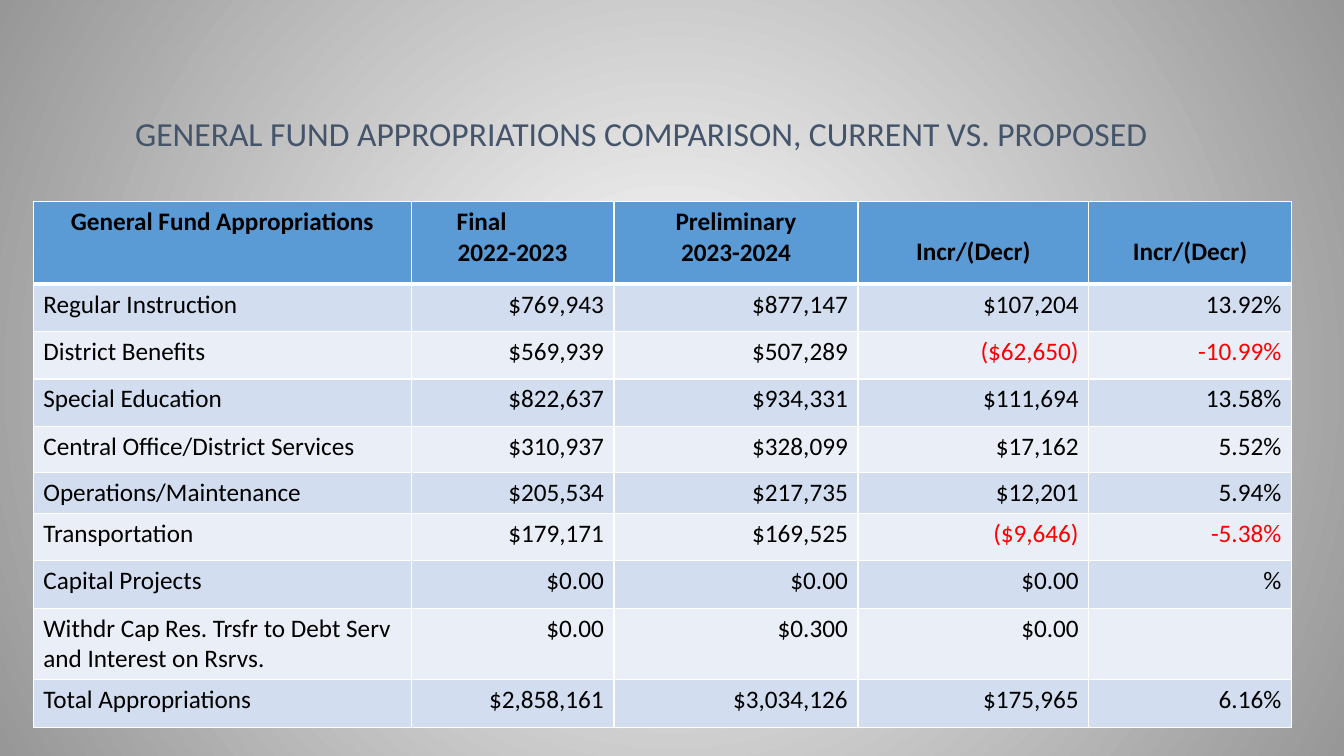
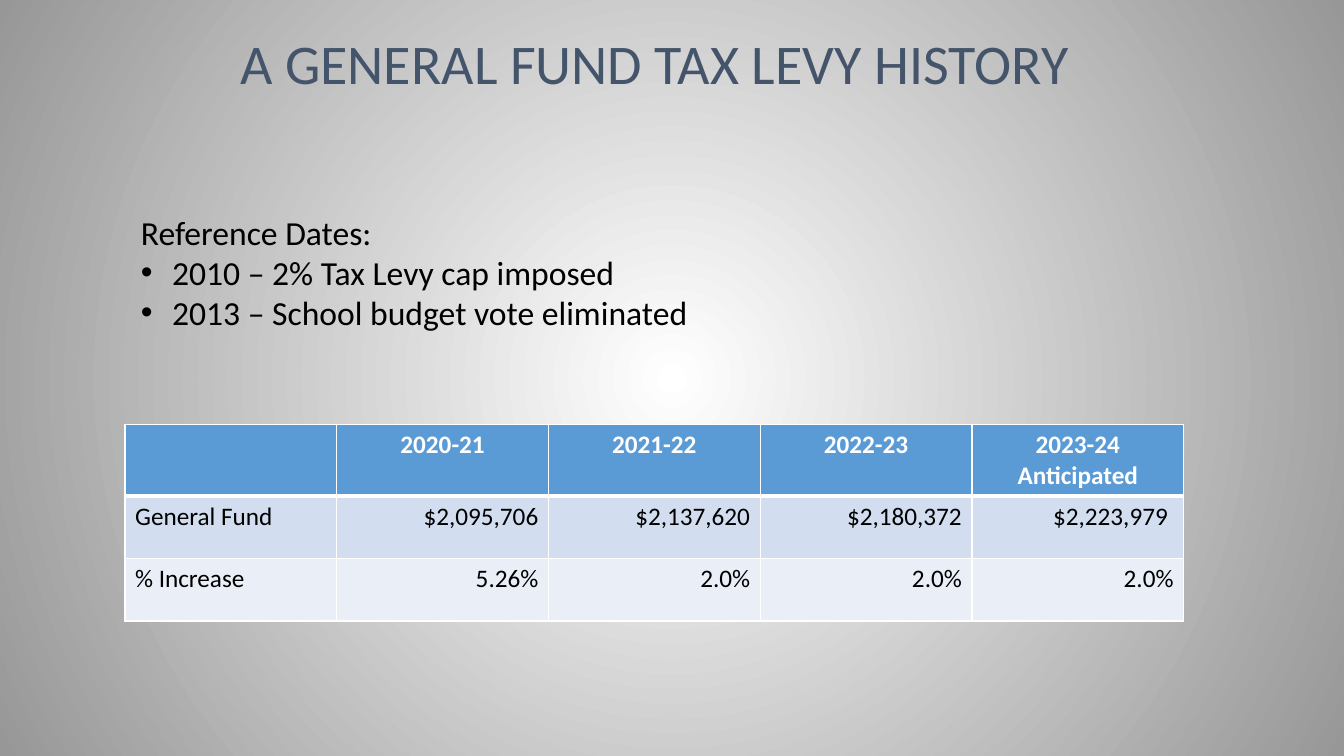
from lxml import etree
from pptx import Presentation
from pptx.dml.color import RGBColor
from pptx.enum.text import MSO_ANCHOR, MSO_AUTO_SIZE, PP_ALIGN
from pptx.oxml import parse_xml
from pptx.oxml.ns import nsdecls, qn
from pptx.util import Inches, Pt

LEFT, CENTER, RIGHT = PP_ALIGN.LEFT, PP_ALIGN.CENTER, PP_ALIGN.RIGHT
BOTTOM = MSO_ANCHOR.BOTTOM
NO_FIT = MSO_AUTO_SIZE.NONE

FONT = "Calibri"
HEX = {
    "title": "44546A",
    "head": "5B9BD5",
    "odd": "D2DEEF",
    "even": "EAEFF7",
    "text": "000000",
    "loss": "FF0000",
    "white": "FFFFFF",
    "edge": "979797",
}

FUNDS = [
    ["General Fund Appropriations", "Final\n2022-2023",
     "Preliminary\n2023-2024", "Incr/(Decr)", "Incr/(Decr)"],
    ["Regular Instruction", "$769,943", "$877,147", "$107,204", "13.92%"],
    ["District Benefits", "$569,939", "$507,289", "($62,650)", "-10.99%"],
    ["Special Education", "$822,637", "$934,331", "$111,694", "13.58%"],
    ["Central Office/District Services", "$310,937", "$328,099", "$17,162", "5.52%"],
    ["Operations/Maintenance", "$205,534", "$217,735", "$12,201", "5.94%"],
    ["Transportation", "$179,171", "$169,525", "($9,646)", "-5.38%"],
    ["Capital Projects", "$0.00", "$0.00", "$0.00", "%"],
    ["Withdr Cap Res. Trsfr to Debt Serv and Interest on Rsrvs.",
     "$0.00", "$0.300", "$0.00", ""],
    ["Total Appropriations", "$2,858,161", "$3,034,126", "$175,965", "6.16%"],
]
LEVY = [
    ["", "2020-21", "2021-22", "2022-23", "2023-24\nAnticipated"],
    ["General Fund", "$2,095,706", "$2,137,620", "$2,180,372", "$2,223,979 "],
    ["% Increase", "5.26%", "2.0%", "2.0%", "2.0%"],
]
DATES = [
    "Reference Dates:",
    "2010 – 2% Tax Levy cap imposed",
    "2013 – School budget vote eliminated",
]


def color(name):
    return RGBColor.from_string(HEX[name])


def style(para, size, ink, align=LEFT, bold=False):
    para.alignment = align
    for run in para.runs:
        font = run.font
        font.name, font.size, font.bold = FONT, Pt(size), bold
        font.color.rgb = color(ink)


def indent(para, left, first=0):
    props = para._p.get_or_add_pPr()
    props.set("marL", str(Inches(left)))
    props.set("indent", str(Inches(first)))
    return props


def paint(master):
    fill = master.background.fill
    fill.gradient()
    for stop, name in zip(fill.gradient_stops, ("white", "edge")):
        stop.color.rgb = color(name)
    grad = master.element.find(".//" + qn("p:bg") + "//" + qn("a:gradFill"))
    grad.replace(grad.find(qn("a:lin")), parse_xml(
        f'<a:path {nsdecls("a")} path="circle">'
        '<a:fillToRect l="50000" t="50000" r="50000" b="50000"/></a:path>'))


def add_slide(deck, text, top, high, size, align):
    slide = deck.slides.add_slide(deck.slide_layouts[5])
    title = slide.shapes.title
    title.left, title.top = Inches(1.24), Inches(top)
    title.width, title.height = Inches(10.5), Inches(high)
    frame = title.text_frame
    frame.text = text
    frame.auto_size, frame.word_wrap = NO_FIT, True
    frame.vertical_anchor = BOTTOM
    para = frame.paragraphs[0]
    para.line_spacing = 0.9
    style(para, size, "title", align)
    return slide


def border(cell, row):
    props = cell._tc.get_or_add_tcPr()
    thick = {0: "B", 1: "T"}.get(row)
    for side in "LRTB":
        width = Pt(3 if side == thick else 1)
        props.append(parse_xml(
            f'<a:ln{side} {nsdecls("a")} w="{width}"><a:solidFill>'
            f'<a:srgbClr val="{HEX["white"]}"/></a:solidFill></a:ln{side}>'))


def fill_cell(cell, text, row, col, ink):
    border(cell, row)
    cell.fill.solid()
    cell.fill.fore_color.rgb = color("head" if row == 0 else "odd" if row % 2 else "even")
    cell.text_frame.text = text
    if row == 0:
        align = CENTER
    else:
        align = RIGHT if col else LEFT
        ink = "loss" if text.startswith(("(", "-")) else "text"
    for para in cell.text_frame.paragraphs:
        style(para, 18, ink, align, row == 0)


def add_grid(slide, data, left, top, cols, rows, ink):
    table = slide.shapes.add_table(
        len(rows), len(cols), Inches(left), Inches(top),
        Inches(sum(cols)), Inches(sum(rows))).table
    for col, width in zip(table.columns, cols):
        col.width = Inches(width)
    for row, high in zip(table.rows, rows):
        row.height = Inches(high)
    for row, line in enumerate(data):
        for col, text in enumerate(line):
            fill_cell(table.cell(row, col), text, row, col, ink)
    return table


def add_notes(slide, lines):
    box = slide.shapes.add_textbox(Inches(1.3), Inches(2.05), Inches(10.24), Inches(2.02))
    frame = box.text_frame
    frame.word_wrap = True
    frame.text = "\n".join(lines)
    for num, para in enumerate(frame.paragraphs):
        style(para, 24, "text")
        if num:
            props = indent(para, 0.31, -0.31)
            etree.SubElement(props, qn("a:buFont")).set("typeface", "Arial")
            etree.SubElement(props, qn("a:buChar")).set("char", "•")


def add_funds(deck):
    slide = add_slide(deck, "GENERAL FUND APPROPRIATIONS COMPARISON, CURRENT VS. PROPOSED",
                      1.04, 0.54, 24, LEFT)
    table = add_grid(slide, FUNDS, 0.33, 2, [3.75, 2.01, 2.42, 2.29, 2.01],
                     [0.82, 0.47, 0.47, 0.47, 0.46, 0.4, 0.47, 0.47, 0.7, 0.47], "text")
    final = table.cell(0, 1).text_frame.paragraphs[0]
    final.alignment = LEFT
    indent(final, 0.35)
    for col in (3, 4):
        table.cell(0, col).margin_top = Inches(0.35)


def add_levy(deck):
    slide = add_slide(deck, "A GENERAL FUND TAX LEVY HISTORY", 0.4, 0.61, 40, CENTER)
    add_grid(slide, LEVY, 1.24, 4.21, [2.1] * 5, [0.7, 0.62, 0.62], "white")
    add_notes(slide, DATES)


def main():
    deck = Presentation()
    deck.slide_width, deck.slide_height = Inches(13.33), Inches(7.5)
    paint(deck.slide_master)
    add_funds(deck)
    add_levy(deck)
    deck.save("out.pptx")


if __name__ == "__main__":
    main()
